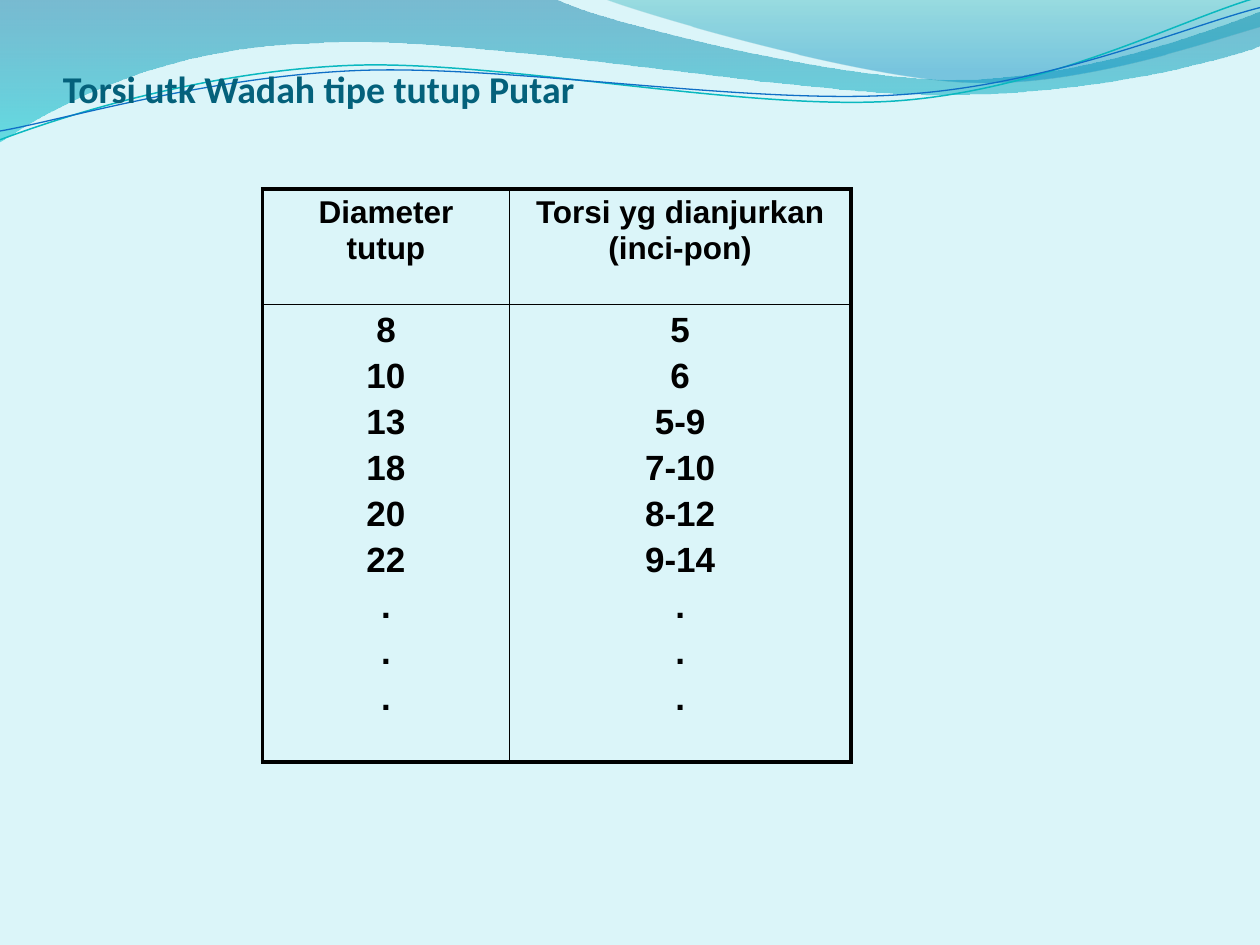
import math

from pptx import Presentation
from pptx import util as u
from pptx.dml.color import RGBColor
from pptx.enum import text
from pptx.oxml import parse_xml
from pptx.oxml.ns import nsdecls, qn

TITLE = "Torsi utk Wadah tipe tutup Putar"
HEADERS = ["Diameter tutup", "Torsi yg dianjurkan (inci-pon)"]
COLUMNS = [
    ["8", "10", "13", "18", "20", "22", ".", ".", "."],
    ["5", "6", "5-9", "7-10", "8-12", "9-14", ".", ".", "."],
]
TABLE_LEFT, TABLE_TOP = 25 / 12, 1.5
COLUMN_WIDTHS = [1.96, 2.71]
ROW_HEIGHTS = [11 / 12, 3.63]

BANDS = [
    ((-0.01, -0.01, 10.02, 1.14),
     [(0, 0), (4.4, -0.01), (4.76, 0.17, 6.64, 0.63, 7.58, 0.63),
      (8.53, 0.63, 9.58, 0.26, 10, 0.09), (10.01, 0.36),
      (9.83, 0.44, 8.7, 0.76, 7.46, 0.75), (6.22, 0.75, 3.82, 0.28, 2.57, 0.34),
      (1.29, 0.36, 0.46, 0.83, -0.01, 1.13), (0, 0)],
     [(0, "0074A1", 45), (100, "00C6CF", 55)]),
    ((4.79, -0.01, 5.21, 0.7),
     [(4.79, -0.01), (5.09, 0.11, 6.82, 0.62, 7.69, 0.65),
      (8.56, 0.69, 9.61, 0.32, 10, 0.21), (10, 0), (4.79, -0.01)],
     [(0, "00A1A9", 30), (80, "008BBF", 45)]),
]
WAVES = [
    ((-0.02, 0.22, 10.02, 0.71),
     [(0, 1.11), (0.48, 0.93, 1.58, 0.57, 2.77, 0.52),
      (3.95, 0.47, 5.93, 0.89, 7.13, 0.8), (8.33, 0.71, 9.38, 0.15, 9.98, -0.02)],
     "0AB8BF", 0.85),
    ((-0.02, 0.3, 10.03, 0.58),
     [(0, 1.04), (0.47, 0.96, 1.64, 0.61, 2.83, 0.56),
      (4.03, 0.51, 5.97, 0.84, 7.17, 0.75), (8.36, 0.67, 9.41, 0.21, 10, 0.06)],
     "0F6FC6", 0.75),
]
WAVE_TILT = 357.3


def color(value):
    return RGBColor.from_string(value)


def to_frame(point, box, rotation):
    left, top, width, height = box
    x, y = point[0] - left - width / 2, point[1] - top - height / 2
    angle = math.radians(-rotation)
    return (u.Inches(x * math.cos(angle) - y * math.sin(angle) + width / 2),
            u.Inches(x * math.sin(angle) + y * math.cos(angle) + height / 2))


def add_outline(slide, box, steps, close, rotation=0):
    ends = [to_frame(step[-2:], box, rotation) for step in steps]
    builder = slide.shapes.build_freeform(*ends[0])
    builder.add_line_segments(ends[1:], close=close)
    shape = builder.convert_to_shape()
    shape.left, shape.top, shape.width, shape.height = map(u.Inches, box)
    shape.rotation = rotation
    shape.shadow.inherit = False
    shape.fill.background()
    outline = next(shape._element.iter(qn("a:path")))
    outline.set("w", str(shape.width))
    outline.set("h", str(shape.height))
    for node, step in zip(list(outline), steps):
        points = [to_frame(step[i:i + 2], box, rotation) for i in range(0, len(step), 2)]
        tag = "moveTo" if step is steps[0] else "lnTo" if len(step) == 2 else "cubicBezTo"
        point_xml = "".join(f'<a:pt x="{x}" y="{y}"/>' for x, y in points)
        outline.replace(node, parse_xml(f'<a:{tag} {nsdecls("a")}>{point_xml}</a:{tag}>'))
    return shape


def set_gradient(shape, stops):
    stop_xml = "".join(
        f'<a:gs pos="{position * 1000}"><a:srgbClr val="{value}">'
        f'<a:alpha val="{alpha * 1000}"/></a:srgbClr></a:gs>'
        for position, value, alpha in stops)
    properties = shape.fill._xPr
    properties.replace(properties.eg_fillProperties, parse_xml(
        f'<a:gradFill {nsdecls("a")}><a:gsLst>{stop_xml}</a:gsLst>'
        '<a:lin ang="5400000" scaled="0"/></a:gradFill>'))


def set_borders(cell, widths):
    properties = cell._tc.get_or_add_tcPr()
    for index, (side, width) in enumerate(zip("LRTB", widths)):
        properties.insert(index, parse_xml(
            f'<a:ln{side} {nsdecls("a")} w="{u.Pt(width)}"><a:solidFill>'
            f'<a:srgbClr val="000000"/></a:solidFill></a:ln{side}>'))


def style_font(font, name, size, value):
    font.name, font.size, font.bold = name, u.Pt(size), True
    font.color.rgb = color(value)


def add_title(slide):
    frame = slide.shapes.add_textbox(
        u.Inches(0.5), u.Inches(0.55), u.Inches(9), u.Inches(0.33)).text_frame
    frame.word_wrap = True
    frame.vertical_anchor = text.MSO_ANCHOR.BOTTOM
    frame.margin_left = frame.margin_right = frame.margin_bottom = 0
    frame.text = TITLE
    style_font(frame.paragraphs[0].runs[0].font, "Calibri", 21.6, "04617B")


def add_torque_table(slide):
    table = slide.shapes.add_table(
        2, 2, u.Inches(TABLE_LEFT), u.Inches(TABLE_TOP),
        u.Inches(sum(COLUMN_WIDTHS)), u.Inches(sum(ROW_HEIGHTS))).table
    table.first_row = table.horz_banding = False
    for column, width in zip(table.columns, COLUMN_WIDTHS):
        column.width = u.Inches(width)
    for row, height in zip(table.rows, ROW_HEIGHTS):
        row.height = u.Inches(height)
    for row, size in enumerate([18, 20]):
        for column in range(2):
            cell = table.cell(row, column)
            cell.text_frame.text = "\n".join(COLUMNS[column]) if row else HEADERS[column]
            for paragraph in cell.text_frame.paragraphs:
                paragraph.alignment = text.PP_ALIGN.CENTER
                paragraph.space_before = u.Pt(size * 0.2)
                style_font(paragraph.runs[0].font, "Arial", size, "000000")
            cell.fill.background()
            outer = [column == 0, column == 1, row == 0, row == 1]
            set_borders(cell, [2.25 if edge else 1 for edge in outer])


def main():
    presentation = Presentation()
    presentation.slide_width, presentation.slide_height = u.Inches(10), u.Inches(7.5)
    slide = presentation.slides.add_slide(presentation.slide_layouts[6])
    slide.background.fill.solid()
    slide.background.fill.fore_color.rgb = color("DBF5F9")
    for box, steps, stops in BANDS:
        band = add_outline(slide, box, steps, True)
        band.line.fill.background()
        set_gradient(band, stops)
    for box, steps, value, width in WAVES:
        wave = add_outline(slide, box, steps, False, WAVE_TILT)
        wave.line.color.rgb = color(value)
        wave.line.width = u.Pt(width)
    add_title(slide)
    add_torque_table(slide)
    presentation.save("out.pptx")


if __name__ == "__main__":
    main()
